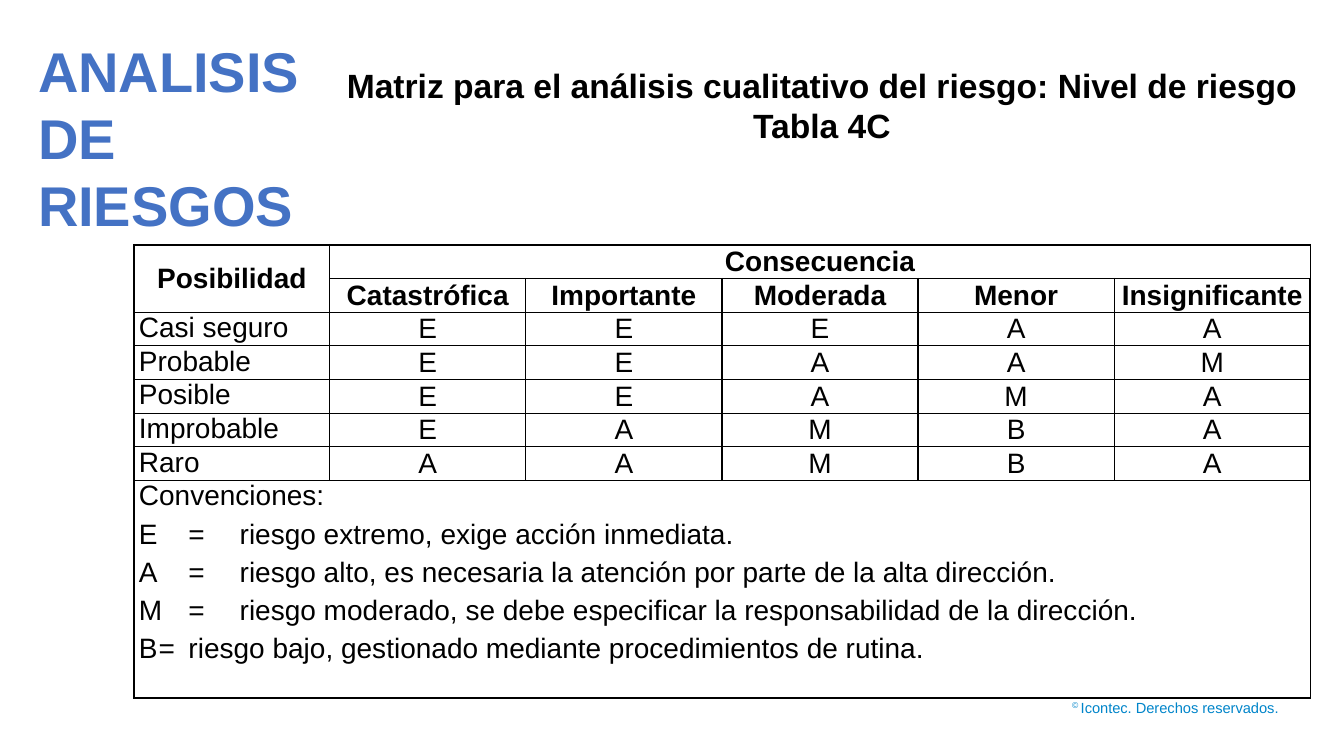
from lxml import etree
from pptx import Presentation
from pptx.dml.color import RGBColor
from pptx.enum.text import MSO_ANCHOR, PP_ALIGN
from pptx.oxml.ns import qn
from pptx.util import Cm, Pt

LEFT, CENTER, RIGHT = PP_ALIGN.LEFT, PP_ALIGN.CENTER, PP_ALIGN.RIGHT
JUSTIFY = PP_ALIGN.JUSTIFY
TOP, MIDDLE = MSO_ANCHOR.TOP, MSO_ANCHOR.MIDDLE
FONT = "Arial"
COLORS = {"title": "4472C4", "text": "000000", "footer": "0085CA"}

# Content
TITLE = "ANALISIS DE RIESGOS"
HEADING = "Matriz para el análisis cualitativo del riesgo: Nivel de riesgo Tabla 4C"
COPYRIGHT = ("© ", "Icontec. Derechos reservados.")
LIKELIHOOD, CONSEQUENCE = "Posibilidad", "Consecuencia"
LEVELS = ["Catastrófica", "Importante", "Moderada", "Menor", "Insignificante"]
RATINGS = [
    ("Casi seguro", "EEEAA"),
    ("Probable", "EEAAM"),
    ("Posible", "EEAMA"),
    ("Improbable", "EAMBA"),
    ("Raro", "AAMBA"),
]
LEGEND = [
    "Convenciones:",
    "E \t= \triesgo extremo, exige acción inmediata.",
    "A \t= \triesgo alto, es necesaria la atención por parte de la alta dirección.",
    "M \t=\triesgo moderado, se debe especificar la responsabilidad de la dirección.",
    "B\t=\triesgo bajo, gestionado mediante procedimientos de rutina.",
]

# Table measures, in cm
TABLE_X, TABLE_Y, TABLE_W = 3.38, 6.17, 29.64
FIRST_W, ROW_H, LEGEND_H = 4.93, 0.81, 5.49
LEGEND_TABS = (0.5, 1.25)
THIN, THICK = 1, 1.5


def add_run(p, text, size, color, bold=False):
    r = p.add_run()
    r.text = text
    r.font.name, r.font.size, r.font.bold = FONT, Pt(size), bold
    r.font.color.rgb = RGBColor.from_string(COLORS[color])
    return r


def add_text(x, y, w, h, align=LEFT):
    tf = s.shapes.add_textbox(Cm(x), Cm(y), Cm(w), Cm(h)).text_frame
    tf.word_wrap = True
    p = tf.paragraphs[0]
    p.alignment = align
    return p


def set_borders(cell, row, col):
    tc_pr = cell._tc.get_or_add_tcPr()
    outer = {"L": col == 0, "R": col == last_col, "T": row == 0, "B": row == last_row}
    for index, (side, is_outer) in enumerate(outer.items()):
        ln = etree.Element(qn(f"a:ln{side}"), w=str(Pt(THICK if is_outer else THIN)))
        fill = etree.SubElement(ln, qn("a:solidFill"))
        etree.SubElement(fill, qn("a:srgbClr"), val=COLORS["text"])
        tc_pr.insert(index, ln)


def fill_cell(row, col, text, align=CENTER, anchor=MIDDLE, bold=False):
    cell = table.cell(row, col)
    cell.vertical_anchor = anchor
    p = cell.text_frame.paragraphs[0]
    p.alignment = align
    add_run(p, text, 20, "text", bold)
    return cell


def add_tabs(p):
    tabs = etree.SubElement(p._p.get_or_add_pPr(), qn("a:tabLst"))
    for pos in LEGEND_TABS:
        etree.SubElement(tabs, qn("a:tab"), pos=str(Cm(pos)), algn="l")


prs = Presentation()
prs.slide_width, prs.slide_height = Cm(33.87), Cm(19.05)
s = prs.slides.add_slide(prs.slide_layouts[6])

# Copyright line
p = add_text(26.59, 17.48, 5.89, 0.74, RIGHT)
mark = add_run(p, COPYRIGHT[0], 10.5, "footer")
mark.font._element.set("baseline", "30000")
add_run(p, COPYRIGHT[1], 10.5, "footer")

# Title and heading
add_run(add_text(0.71, 0.79, 7.7, 5.38), TITLE, 40, "title", True)
add_run(add_text(8.41, 1.5, 24.61, 3.33, CENTER), HEADING, 24, "text", True)

# Risk matrix grid
last_row, last_col = len(RATINGS) + 2, len(LEVELS)
table = s.shapes.add_table(last_row + 1, last_col + 1, Cm(TABLE_X), Cm(TABLE_Y), Cm(TABLE_W),
                           Cm(ROW_H * last_row + LEGEND_H)).table
table.first_row = table.horz_banding = False
for i, column in enumerate(table.columns):
    column.width = Cm((TABLE_W - FIRST_W) / last_col if i else FIRST_W)
for i, row in enumerate(table.rows):
    row.height = Cm(LEGEND_H if i == last_row else ROW_H)
    for j, cell in enumerate(row.cells):
        cell.margin_left = cell.margin_right = Cm(0.12)
        cell.margin_top = cell.margin_bottom = 0
        cell.fill.background()
        set_borders(cell, i, j)
table.cell(0, 0).merge(table.cell(1, 0))
table.cell(0, 1).merge(table.cell(0, last_col))
table.cell(last_row, 0).merge(table.cell(last_row, last_col))

# Headers and ratings
fill_cell(0, 0, LIKELIHOOD, bold=True)
fill_cell(0, 1, CONSEQUENCE, bold=True)
for j, level in enumerate(LEVELS, 1):
    fill_cell(1, j, level, bold=True)
for i, (likelihood, ratings) in enumerate(RATINGS, 2):
    fill_cell(i, 0, likelihood, JUSTIFY, TOP)
    for j, rating in enumerate(ratings, 1):
        fill_cell(i, j, rating)

# Legend
tf = fill_cell(last_row, 0, LEGEND[0], JUSTIFY, TOP).text_frame
tf.paragraphs[0].space_after = Pt(2)
for line in LEGEND[1:]:
    p = tf.add_paragraph()
    p.alignment = JUSTIFY
    p.space_before, p.space_after = Pt(3), Pt(2)
    add_tabs(p)
    add_run(p, line, 20, "text")

prs.save("out.pptx")
